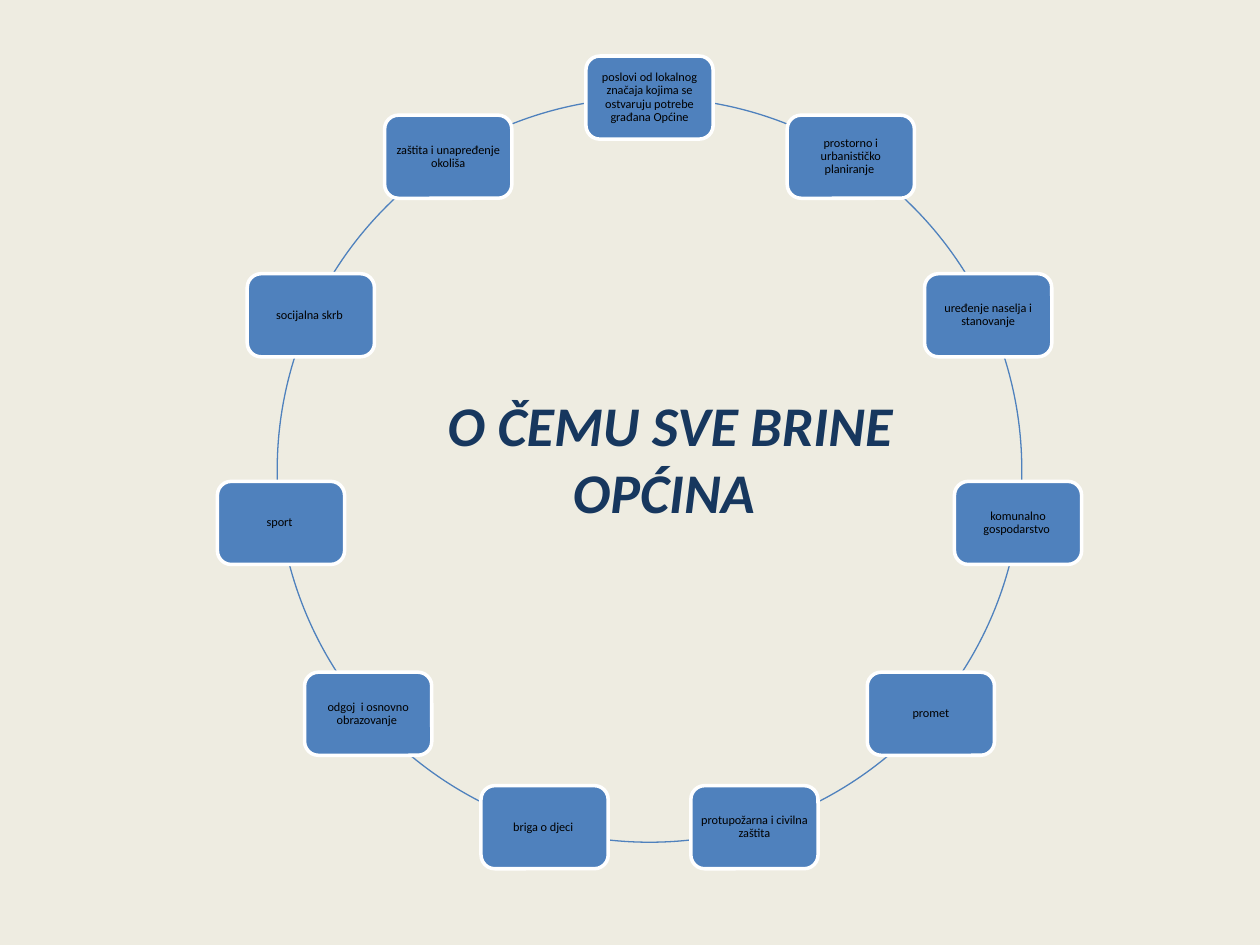
from math import cos, radians, sin
from pptx import Presentation
from pptx.dml.color import RGBColor
from pptx.enum.shapes import MSO_SHAPE
from pptx.enum.text import MSO_ANCHOR, MSO_AUTO_SIZE, PP_ALIGN
from pptx.util import Inches, Pt

WIDE, HIGH = 10, 7.5
MID_X, MID_Y, RAD = 5.155, 3.73, 2.955
BOX_W, BOX_H = 1.01, 0.66
TASKS = [
    "poslovi od lokalnog značaja kojima se ostvaruju potrebe građana Općine",
    "prostorno i urbanističko planiranje ",
    "uređenje naselja i stanovanje",
    "komunalno gospodarstvo ",
    "promet",
    "protupožarna i civilna zaštita",
    "briga o djeci ",
    "odgoj  i osnovno obrazovanje ",
    "sport ",
    "socijalna skrb ",
    "zaštita i unapređenje okoliša",
]
STEP = 360 / len(TASKS)


def paint(color, code):
    color.rgb = RGBColor.from_string(code)


def angle(i):
    return (270 + i * STEP) % 360


def place(slide, kind, x, y, w, h):
    shape = slide.shapes.add_shape(
        kind, Inches(x - w / 2), Inches(y - h / 2), Inches(w), Inches(h))
    shape.shadow.inherit = False
    return shape


def edge(shape, code, width):
    paint(shape.line.color, code)
    shape.line.width = Pt(width)


def write(frame, text, size, code, bold=False, italic=False):
    frame.word_wrap = True
    frame.auto_size = MSO_AUTO_SIZE.NONE
    frame.vertical_anchor = MSO_ANCHOR.MIDDLE
    para = frame.paragraphs[0]
    para.alignment = PP_ALIGN.CENTER
    run = para.add_run()
    run.text = text
    font = run.font
    font.name, font.size = "Calibri", Pt(size)
    font.bold, font.italic = bold, italic
    paint(font.color, code)
    return para


def add_arc(slide, i):
    arc = place(slide, MSO_SHAPE.ARC, MID_X, MID_Y, 2 * RAD, 2 * RAD)
    for k in range(2):
        arc.adjustments[k] = angle(i + k) * 0.6
    arc.fill.background()
    edge(arc, "4F81BD", 0.75)


def add_task(slide, i, text):
    turn = radians(angle(i))
    x, y = MID_X + RAD * cos(turn), MID_Y + RAD * sin(turn)
    box = place(slide, MSO_SHAPE.ROUNDED_RECTANGLE, x, y, BOX_W, BOX_H)
    box.fill.solid()
    paint(box.fill.fore_color, "4F81BD")
    edge(box, "FFFFFF", 2)
    frame = box.text_frame
    frame.margin_left = frame.margin_right = Inches(0.03)
    frame.margin_top = frame.margin_bottom = Inches(0.03)
    write(frame, text, 7, "000000").line_spacing = 0.9


def add_title(slide, text):
    title = slide.shapes.title
    title.left, title.top = Inches(3.43), Inches(3.04)
    title.width, title.height = Inches(3.78), Inches(1.18)
    write(title.text_frame, text, 32, "17375E", True, True)


def main():
    deck = Presentation()
    deck.slide_width, deck.slide_height = Inches(WIDE), Inches(HIGH)
    slide = deck.slides.add_slide(deck.slide_layouts[5])
    back = slide.background.fill
    back.solid()
    paint(back.fore_color, "EEECE1")
    for i in range(len(TASKS)):
        add_arc(slide, i)
    for i, text in enumerate(TASKS):
        add_task(slide, i, text)
    add_title(slide, "O ČEMU SVE BRINE OPĆINA ")
    deck.save("out.pptx")


if __name__ == "__main__":
    main()
